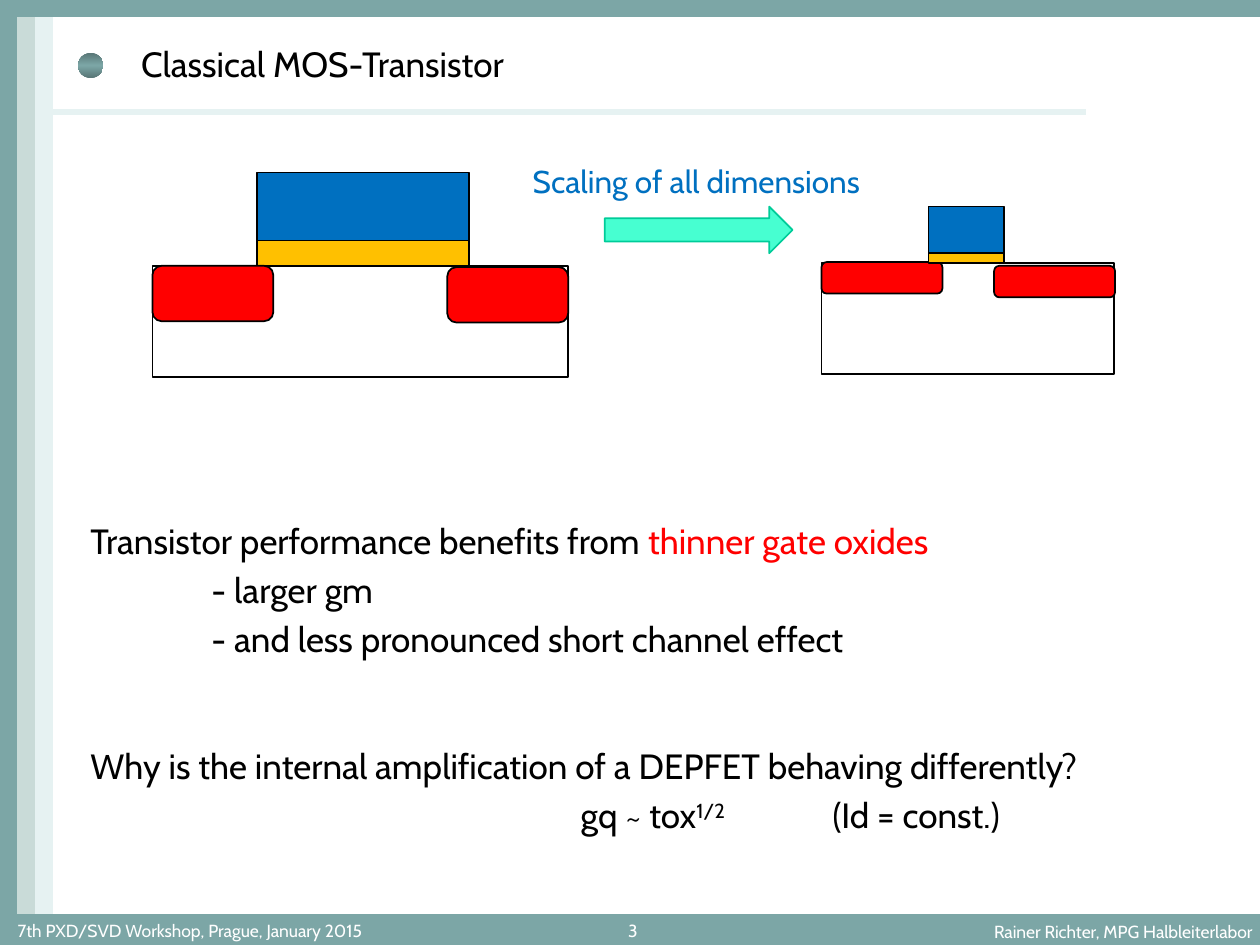
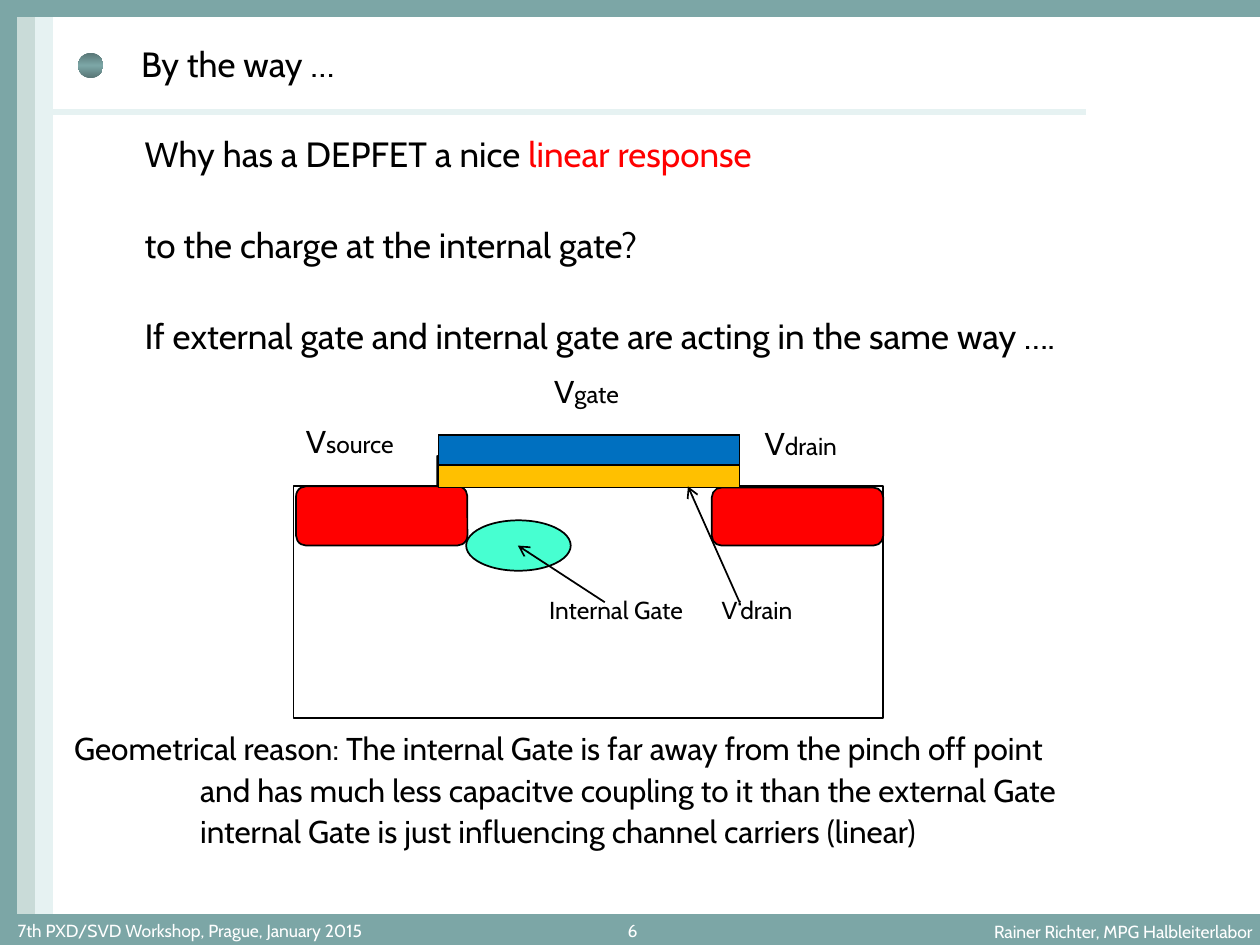
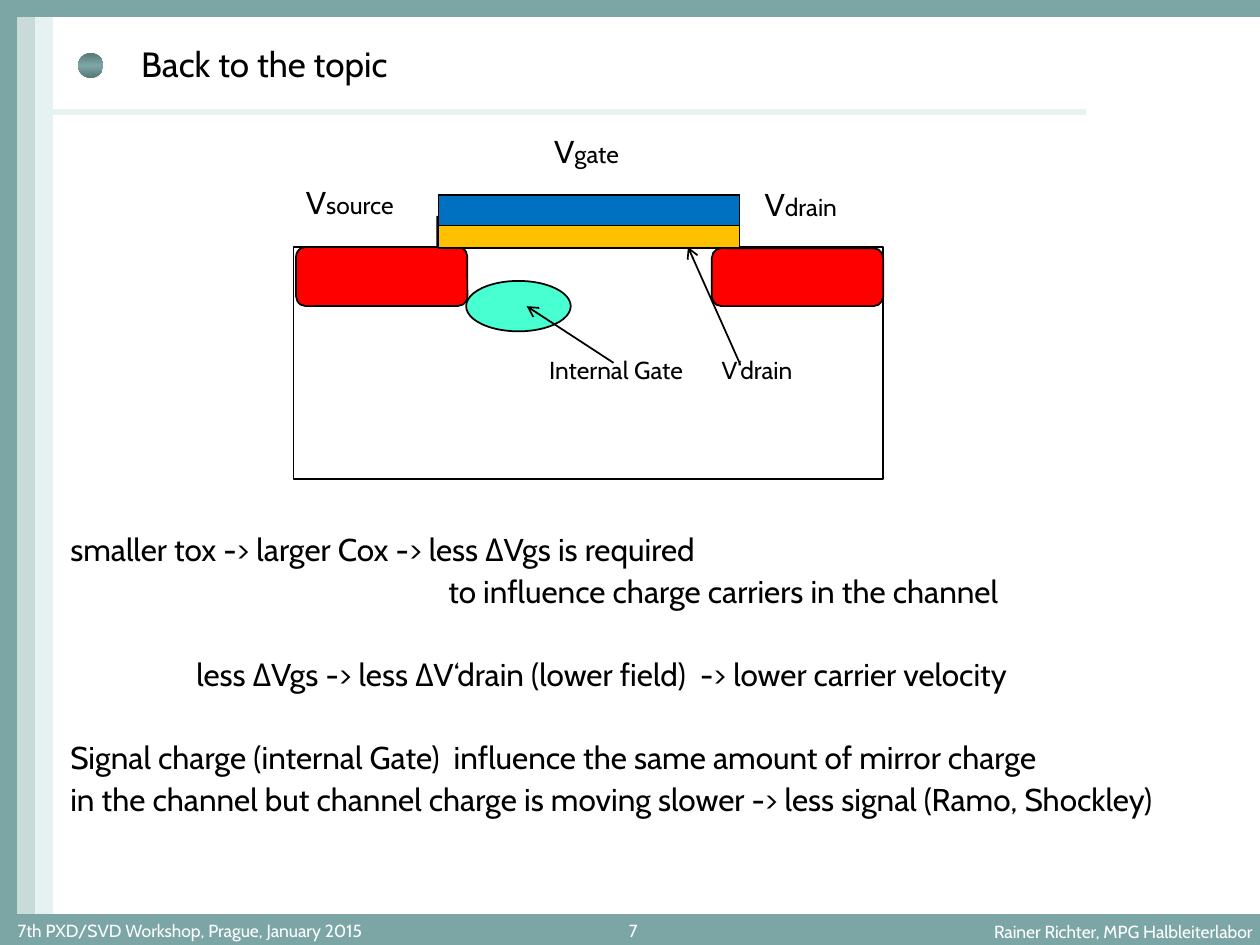
from copy import deepcopy
from dataclasses import dataclass
from typing import Optional

from lxml.etree import SubElement
from pptx import Presentation
from pptx.dml.color import RGBColor
from pptx.enum.shapes import MSO_CONNECTOR as Connector, MSO_SHAPE as Preset
from pptx.enum.text import MSO_ANCHOR as Anchor, PP_ALIGN as Align
from pptx.oxml.ns import qn
from pptx.util import Inches, Pt

FONT = "Cabin"
COLORS = {
    "black": "000000", "white": "FFFFFF", "red": "FF0000",
    "gate": "0070C0", "oxide": "FFC000", "mint": "47FFD1", "green": "00CC99",
    "band": "7CA6A6", "band_dark": "597777", "stripe": "C9DBD8", "pale": "E6F2F2",
}


@dataclass(frozen=True)
class Span:
    text: str
    color: Optional[str] = None
    size: Optional[float] = None
    baseline: Optional[int] = None


@dataclass(frozen=True)
class Line:
    spans: tuple[Span, ...]
    indent: float = 0
    before: float = 2
    tabs: tuple[float, ...] = ()


@dataclass(frozen=True)
class Part:
    preset: Preset
    left: float
    top: float
    width: float
    height: float
    fill: str
    outline: str = "black"
    weight: float = 1


@dataclass(frozen=True)
class Label:
    left: float
    top: float
    width: float
    spans: tuple[Span, ...]
    size: float = 14


def line(text: str, indent: float = 0, before: float = 2) -> Line:
    return Line((Span(text),), indent, before)


def voltage(name: str) -> tuple[Span, ...]:
    return Span("V", size=18), Span(name)


def rgb(name: str) -> RGBColor:
    return RGBColor.from_string(COLORS[name])


# Drawing helpers
def add_part(page, part: Part, shift: float = 0):
    shape = page.shapes.add_shape(part.preset, Inches(part.left), Inches(part.top + shift),
                                  Inches(part.width), Inches(part.height))
    shape.shadow.inherit = False
    shape.fill.solid()
    shape.fill.fore_color.rgb = rgb(part.fill)
    shape.line.color.rgb = rgb(part.outline)
    shape.line.width = Pt(part.weight)
    return shape


def add_line(page, start: tuple[float, float], end: tuple[float, float],
             color: str = "black", weight: float = 1, arrow: bool = False) -> None:
    connector = page.shapes.add_connector(Connector.STRAIGHT, *map(Inches, start + end))
    connector.line.color.rgb = rgb(color)
    connector.line.width = Pt(weight)
    properties = connector._element.spPr
    if arrow:
        SubElement(properties.find(qn("a:ln")), qn("a:tailEnd"), type="arrow")
    SubElement(properties, qn("a:effectLst"))


def add_text(page, left: float, top: float, width: float, height: float,
             lines: tuple[Line, ...], size: float, color: str = "black",
             align: Align = Align.LEFT, anchor: Anchor = Anchor.TOP,
             insets: tuple[float, float, float, float] = (0.1, 0.05, 0.1, 0.05)) -> None:
    box = page.shapes.add_textbox(*map(Inches, (left, top, width, height)))
    frame = box.text_frame
    frame.word_wrap = True
    frame.vertical_anchor = anchor
    (frame.margin_left, frame.margin_top,
     frame.margin_right, frame.margin_bottom) = map(Inches, insets)
    for index, item in enumerate(lines):
        para = frame.add_paragraph() if index else frame.paragraphs[0]
        para.alignment = align
        properties = para._p.get_or_add_pPr()
        if item.indent:
            properties.set("marL", str(Inches(item.indent)))
        if index:
            para.space_before = Pt(item.before)
        if item.tabs:
            stops = SubElement(properties, qn("a:tabLst"))
            for stop in item.tabs:
                SubElement(stops, qn("a:tab"), pos=str(Inches(stop)), algn="l")
        para.font.name = FONT
        para.font.size = Pt(size)
        para.font.color.rgb = rgb(color)
        for span in item.spans:
            run = para.add_run()
            run.text = span.text
            if span.color:
                run.font.color.rgb = rgb(span.color)
            if span.size:
                run.font.size = Pt(span.size)
            if span.baseline:
                run.font._element.set("baseline", str(span.baseline * 1000))


# Shared frame: bands, title, footer
BANDS = tuple(
    Part(Preset.RECTANGLE, *place, color, color, 0.75)
    for place, color in (
        ((0.13, 0, 0.15, 7.29), "stripe"),
        ((0.28, 0, 0.14, 7.5), "pale"),
        ((0, 7.26, 10, 0.24), "band"),
        ((0, 0, 0.13, 7.29), "band"),
        ((0, -0.03, 10, 0.16), "band"),
    )
)
TITLE_DOT = Part(Preset.OVAL, 0.62, 0.42, 0.2, 0.2, "band")
FOOTERS = (
    (0.14, 7.28, 3.62, 0.21, "7th PXD/SVD Workshop, Prague, January 2015", Align.LEFT),
    (7.16, 7.29, 2.78, 0.2, "Rainer Richter, MPG Halbleiterlabor", Align.RIGHT),
)


def add_title_dot(page) -> None:
    dot = add_part(page, TITLE_DOT)
    dot.line.fill.background()
    dot.fill.gradient()
    dot.fill.gradient_angle = 90
    for stop in dot.fill.gradient_stops:
        stop.color.rgb = rgb("band_dark")
    first = dot._element.spPr.find(qn("a:gradFill")).find(qn("a:gsLst"))[0]
    first.addnext(deepcopy(first))
    middle = dot.fill.gradient_stops[1]
    middle.position = 0.5
    middle.color.rgb = rgb("band")


def add_page(deck, title: str, number: int):
    page = deck.slides.add_slide(deck.slide_layouts[6])
    for band in BANDS:
        add_part(page, band)
    add_line(page, (0.32, 0.89), (8.62, 0.89), "pale", 3)
    add_title_dot(page)
    add_text(page, 0.42, 0.17, 8.5, 0.67, (line(title),), 20,
             anchor=Anchor.MIDDLE, insets=(0.7, 0.05, 0.1, 0.05))
    footers = FOOTERS + ((4.56, 7.3, 0.5, 0.17, str(number), Align.RIGHT),)
    for left, top, width, height, text, align in footers:
        add_text(page, left, top, width, height, (line(text),), 10, "white",
                 align, Anchor.MIDDLE, (0, 0, 0, 0))
    return page


# Classical transistor before and after scaling
MOS_PARTS = (
    Part(Preset.RECTANGLE, 1.21, 2.11, 3.3, 0.88, "white"),
    Part(Preset.RECTANGLE, 2.04, 1.91, 1.68, 0.2, "oxide"),
    Part(Preset.RECTANGLE, 2.04, 1.37, 1.68, 0.54, "gate"),
    Part(Preset.ROUNDED_RECTANGLE, 1.21, 2.11, 0.96, 0.44, "red"),
    Part(Preset.ROUNDED_RECTANGLE, 3.55, 2.12, 0.96, 0.44, "red"),
    Part(Preset.RECTANGLE, 6.52, 2.09, 2.32, 0.88, "white"),
    Part(Preset.RECTANGLE, 7.37, 1.64, 0.6, 0.37, "gate"),
    Part(Preset.ROUNDED_RECTANGLE, 6.52, 2.08, 0.96, 0.25, "red"),
    Part(Preset.RECTANGLE, 7.37, 2.01, 0.6, 0.08, "oxide"),
    Part(Preset.ROUNDED_RECTANGLE, 7.89, 2.11, 0.96, 0.25, "red"),
    Part(Preset.RIGHT_ARROW, 4.8, 1.64, 1.49, 0.37, "mint", "green"),
)

# DEPFET cross-section, heights relative to the top of the bulk
DEPFET_PARTS = (
    Part(Preset.RECTANGLE, 2.33, 0, 4.68, 1.84, "white"),
    Part(Preset.ROUNDED_RECTANGLE, 2.35, 0, 1.36, 0.47, "red"),
    Part(Preset.RIGHT_TRIANGLE, 3.47, -0.24, 2.13, 0.24, "red"),
    Part(Preset.ROUNDED_RECTANGLE, 5.65, 0.01, 1.36, 0.46, "red"),
    Part(Preset.RECTANGLE, 3.48, -0.41, 2.39, 0.42, "oxide"),
    Part(Preset.RECTANGLE, 3.48, -0.41, 2.39, 0.24, "gate"),
    Part(Preset.OVAL, 3.7, 0.27, 0.83, 0.4, "mint"),
)
DEPFET_LABELS = (
    Label(2.33, -0.56, 1.1, voltage("source")),
    Label(5.97, -0.54, 1.1, voltage("drain")),
    Label(4.3, -0.96, 1.1, voltage("gate")),
    Label(4.26, 0.81, 1.4, (Span("Internal Gate"),)),
    Label(5.63, 0.81, 1.1, (Span("V‘drain"),)),
)


def draw_depfet(page, top: float, pointer_left: float) -> None:
    for part in DEPFET_PARTS:
        add_part(page, part, top)
    for label in DEPFET_LABELS:
        add_text(page, label.left, top + label.top, label.width, 0.4,
                 (Line(label.spans),), label.size)
    add_line(page, (pointer_left + 0.69, top + 0.92), (pointer_left, top + 0.47), arrow=True)
    add_line(page, (5.87, top + 0.92), (5.46, top), arrow=True)


def build_classical(deck) -> None:
    page = add_page(deck, "Classical MOS-Transistor", 3)
    for part in MOS_PARTS:
        add_part(page, part)
    add_text(page, 4.13, 1.24, 3, 0.4, (line("Scaling of all dimensions"),), 18, "gate")
    add_text(page, 0.62, 4.07, 9, 2.7, (
        Line((Span("Transistor performance benefits from "), Span("thinner gate oxides", "red"))),
        line("- larger gm", 0.96, 4),
        line("- and less pronounced short channel effect", 0.96, 4),
        line("Why is the internal amplification of a DEPFET behaving differently?", before=49),
        Line((Span("\tgq ~ tox"), Span("1/2", baseline=30), Span("\t(Id = const.)")),
             before=4, tabs=(3.89, 5.89)),
    ), 20)


def build_linear_response(deck) -> None:
    page = add_page(deck, "By the way …", 6)
    draw_depfet(page, 3.86, 4.11)
    add_text(page, 0.49, 5.74, 9, 1.1, (
        line("Geometrical reason: The internal Gate is far away from the pinch off point"),
        line("and has much less capacitve coupling to it than the external Gate", 1),
        line("internal Gate is just influencing channel carriers (linear)", 1),
    ), 18)
    add_text(page, 1.05, 1, 8.5, 1.9, (
        Line((Span("Why has a DEPFET a nice "), Span("linear response", "red"))),
        line("to the charge at the internal gate?", before=28),
        line("If external gate and internal gate are acting in the same way ….", before=28),
    ), 20)


def build_topic(deck) -> None:
    page = add_page(deck, "Back to the topic", 7)
    draw_depfet(page, 1.96, 4.18)
    add_text(page, 0.46, 4.16, 9.3, 2.5, (
        line("smaller tox -> larger Cox -> less ΔVgs is required"),
        line("to influence charge carriers in the channel", 3),
        line("less ΔVgs -> less ΔV‘drain (lower field)  -> lower carrier velocity", 1, 26),
        line("Signal charge (internal Gate)  influence the same amount of mirror charge", before=26),
        line("in the channel but channel charge is moving slower -> less signal (Ramo, Shockley)"),
    ), 18)


def main() -> None:
    deck = Presentation()
    deck.slide_width, deck.slide_height = Inches(10), Inches(7.5)
    build_classical(deck)
    build_linear_response(deck)
    build_topic(deck)
    deck.save("out.pptx")


if __name__ == "__main__":
    main()
